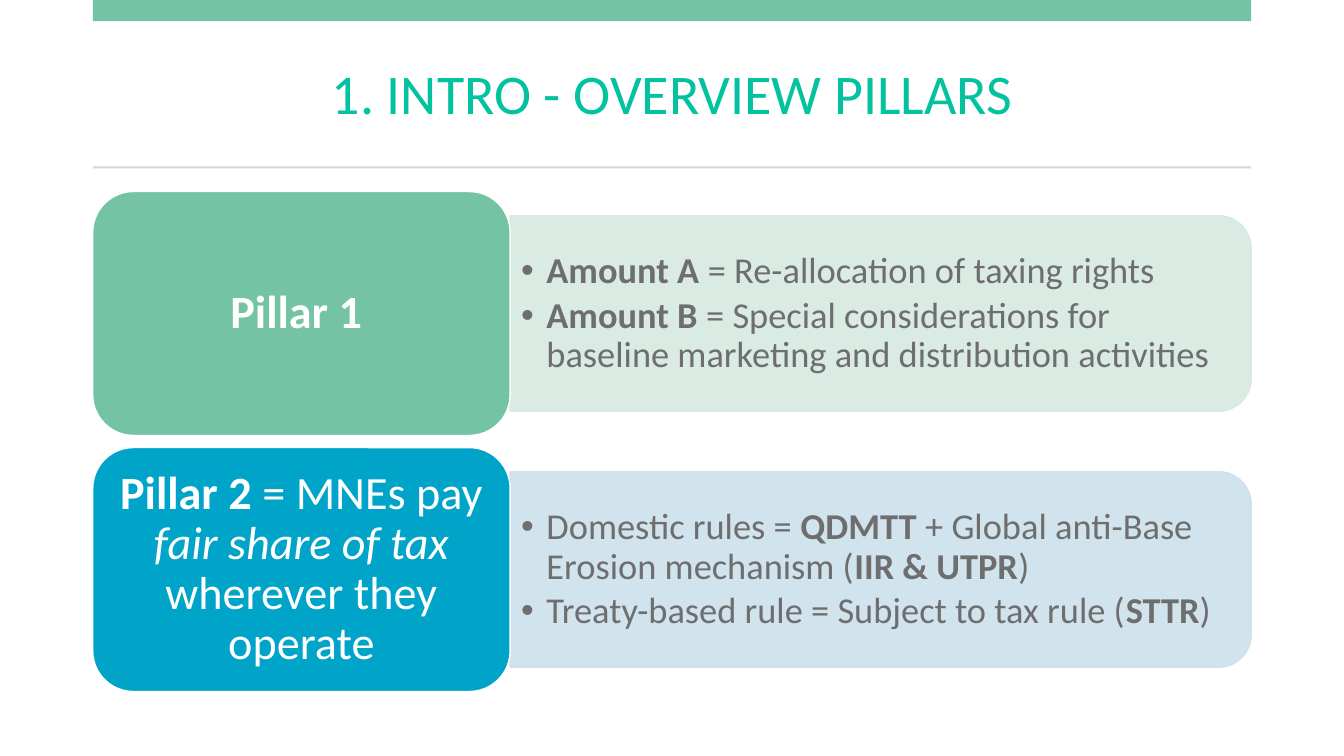
"""Build the slide that gives an overview of the two tax pillars."""
from lxml.etree import SubElement
from pptx import Presentation
from pptx.dml.color import RGBColor
from pptx.enum.shapes import MSO_SHAPE
from pptx.enum.text import MSO_ANCHOR, MSO_AUTO_SIZE, PP_ALIGN
from pptx.oxml.ns import qn
from pptx.util import Inches, Pt


def paint(item, color, alpha=None):
    """Give a fill or a font a solid colour, with an optional alpha in percent."""
    fill = getattr(item, "fill", item)
    fill.solid()
    fill.fore_color.rgb = RGBColor.from_string(color)
    if alpha:
        for tone in fill._xPr.iterfind(qn("a:solidFill") + "/" + qn("a:srgbClr")):
            SubElement(tone, qn("a:alpha")).set("val", str(alpha * 1000))


def write(par, runs, size, color):
    """Add runs of text, each with its style: b for bold, i for italic."""
    par.line_spacing = 0.9
    for text, style in runs:
        run = par.add_run()
        run.text = text
        font = run.font
        font.name, font.size = "Calibri", Pt(size)
        font.bold, font.italic = style == "b", style == "i"
        paint(font, color)


LEFT, WIDE = 0.92, 11.49
TOP, STEP, TALL = 1.9, 2.54, 2.42
LABEL, BAND = 4.14, 1.94
LONG = WIDE - LABEL

PILLARS = [
    ("75C3A5", "D6E9E1", [("Pillar 1 ", "b")], [
        [("Amount A", "b"), (" = Re-allocation of taxing rights", "")],
        [("Amount B", "b"),
         (" = Special considerations for baseline marketing and distribution activities", "")],
    ]),
    ("00A4C9", "CCE0EB",
     [("Pillar 2", "b"), (" = MNEs pay ", ""), ("fair share of tax ", "i"),
      ("wherever they operate", "")], [
        [("Domestic rules = ", ""), ("QDMTT", "b"),
         (" + Global anti-Base Erosion mechanism (", ""), ("IIR & UTPR", "b"), (")", "")],
        [("Treaty-based rule = Subject to tax rule (", ""), ("STTR", "b"), (")", "")],
    ]),
]

deck = Presentation()
deck.slide_width, deck.slide_height = Inches(13.33), Inches(7.5)
slide = deck.slides.add_slide(deck.slide_layouts[3])
shapes = slide.shapes
title, *lists = slide.placeholders

title.left, title.top = Inches(LEFT), Inches(0.37)
title.width, title.height = Inches(WIDE), Inches(1.18)
frame = title.text_frame
frame.auto_size = MSO_AUTO_SIZE.NONE
frame.vertical_anchor = MSO_ANCHOR.MIDDLE
frame.paragraphs[0].alignment = PP_ALIGN.CENTER
write(frame.paragraphs[0], [("1. INTRO - OVERVIEW PILLARS", "")], 40, "02C29F")

for top, tall, color in [(0, 0.21, "75C3A5"), (1.65, 0.02, "D5D5D5")]:
    bar = shapes.add_shape(MSO_SHAPE.RECTANGLE, Inches(LEFT), Inches(top),
                           Inches(WIDE), Inches(tall))
    bar.shadow.inherit = False
    paint(bar, color)
    bar.line.fill.background()

for row, (body, (dark, pale, name, points)) in enumerate(zip(lists, PILLARS)):
    top = TOP + row * STEP
    mid = top + TALL / 2
    band = shapes.add_shape(
        MSO_SHAPE.ROUND_2_SAME_RECTANGLE,
        Inches(LEFT + LABEL + (LONG - BAND) / 2), Inches(mid - LONG / 2),
        Inches(BAND), Inches(LONG))
    band.rotation = 90
    band.shadow.inherit = False
    paint(band, pale, 90)
    band.line.width = Pt(1)
    paint(band.line, pale, 90)

    shapes._spTree.append(body._element)
    body.left, body.top = Inches(LEFT + LABEL), Inches(mid - 0.87)
    body.width, body.height = Inches(7.26), Inches(1.75)
    frame = body.text_frame
    frame.auto_size = MSO_AUTO_SIZE.NONE
    frame.vertical_anchor = MSO_ANCHOR.MIDDLE
    frame.margin_left = frame.margin_right = Inches(0.11)
    for place, runs in enumerate(points):
        par = frame.add_paragraph() if place else frame.paragraphs[0]
        par.level = 1
        par.space_before, par.space_after = Pt(0), Pt(4)
        props = par._p.get_or_add_pPr()
        props.set("marL", str(Inches(0.25)))
        props.set("indent", str(Inches(-0.25)))
        SubElement(props, qn("a:buFont")).set("typeface", "Arial")
        SubElement(props, qn("a:buChar")).set("char", "•")
        write(par, runs, 26, "6E6E6E")

    label = shapes.add_shape(MSO_SHAPE.ROUNDED_RECTANGLE, Inches(LEFT), Inches(top),
                             Inches(LABEL), Inches(TALL))
    label.shadow.inherit = False
    paint(label, dark)
    label.line.width = Pt(1)
    paint(label.line, "FFFFFF")
    frame = label.text_frame
    frame.word_wrap = True
    frame.vertical_anchor = MSO_ANCHOR.MIDDLE
    frame.margin_left = frame.margin_right = Inches(0.14)
    frame.margin_top = frame.margin_bottom = Inches(0.07)
    frame.paragraphs[0].alignment = PP_ALIGN.CENTER
    write(frame.paragraphs[0], name, 33, "FFFFFF")

deck.save("out.pptx")
